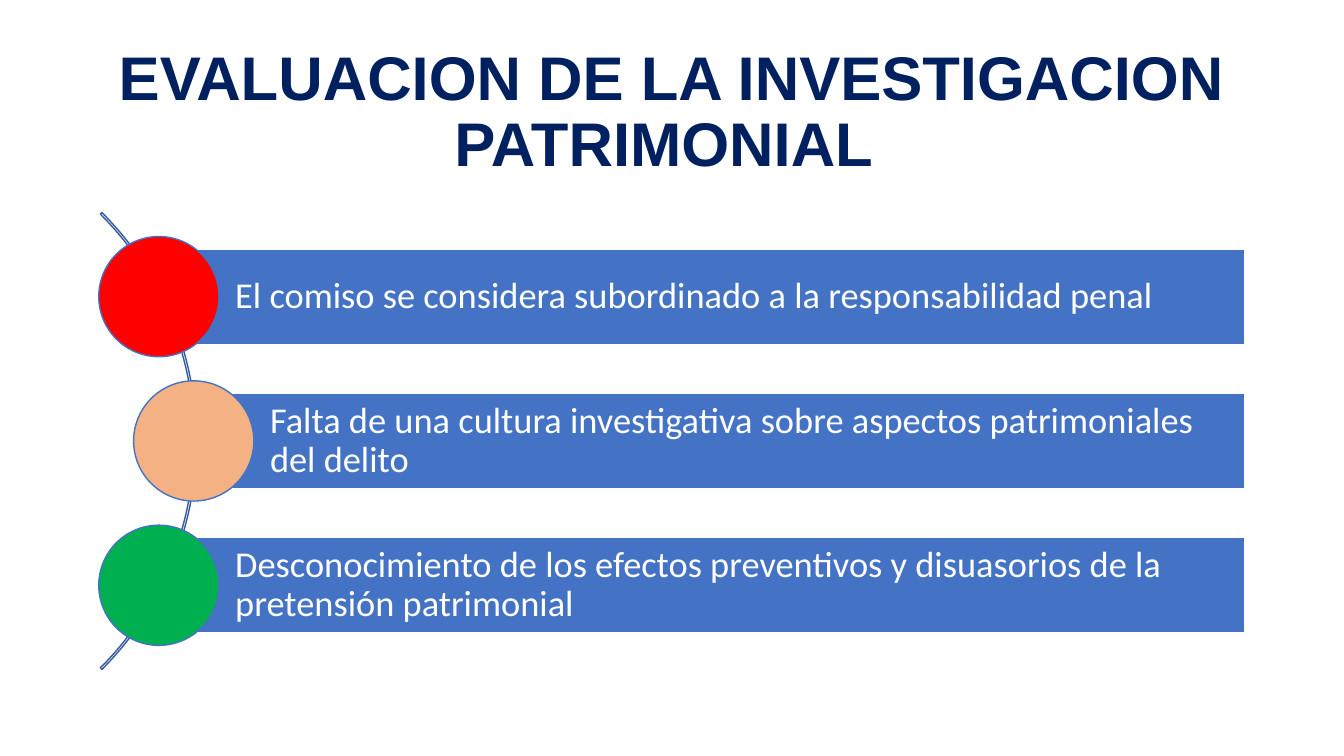
import pptx
import pptx.util
import pptx.dml.color
import pptx.enum.shapes
import pptx.enum.text

Pt = pptx.util.Pt
RGBColor = pptx.dml.color.RGBColor
MSO_SHAPE = pptx.enum.shapes.MSO_SHAPE
PP_ALIGN = pptx.enum.text.PP_ALIGN

NAVY = RGBColor(0x00, 0x20, 0x60)
BLUE = RGBColor(0x44, 0x72, 0xC4)
ARC_BLUE = RGBColor(0x36, 0x5B, 0x9D)
WHITE = RGBColor(0xFF, 0xFF, 0xFF)
RED = RGBColor(0xFF, 0x00, 0x00)
PEACH = RGBColor(0xF4, 0xB1, 0x83)
GREEN = RGBColor(0x00, 0xB0, 0x50)

TITLE_FONT = {"name": "Arial", "size": Pt(44), "bold": True}
BAR_FONT = {"name": "Calibri", "size": Pt(26), "bold": False}
BAR_INSETS = {"margin_left": Pt(54.5), "margin_right": Pt(5),
              "margin_top": Pt(5), "margin_bottom": Pt(5)}

MIDDLE_Y, PITCH = 315, 103.1
BAR_RIGHT, BAR_HEIGHT, CIRCLE = 889.2, 68.2, 85.9
ARC_LEFT, ARC_SIZE = -321.1, 461.5
ITEMS = [
    (113.5, RED, "El comiso se considera subordinado a la responsabilidad penal"),
    (138.4, PEACH, "Falta de una cultura investigativa sobre aspectos patrimoniales del delito"),
    (113.5, GREEN, "Desconocimiento de los efectos preventivos y disuasorios de la pretensión patrimonial"),
]


class SlideBuilder:
    """Draws styled elements on the current slide, with lengths in points."""

    def __init__(self, prs):
        self.s = prs.slides.add_slide(prs.slide_layouts[6])

    def text(self, tf, text, font, color, align, insets):
        tf.word_wrap = True
        tf.vertical_anchor = pptx.enum.text.MSO_ANCHOR.MIDDLE
        for name, value in insets.items():
            setattr(tf, name, value)
        p = tf.paragraphs[0]
        p.alignment = align
        p.line_spacing = 0.9
        r = p.add_run()
        r.text = text
        for name, value in font.items():
            setattr(r.font, name, value)
        r.font.color.rgb = color

    def title(self, text, x, y, w, h):
        tb = self.s.shapes.add_textbox(Pt(x), Pt(y), Pt(w), Pt(h))
        self.text(tb.text_frame, text, TITLE_FONT, NAVY, PP_ALIGN.CENTER, {})

    def shape(self, kind, x, y, w, h, line, fill=None):
        sp = self.s.shapes.add_shape(kind, Pt(x), Pt(y), Pt(w), Pt(h))
        sp.shadow.inherit = False
        if fill is None:
            sp.fill.background()
        else:
            sp.fill.solid()
            sp.fill.fore_color.rgb = fill
        sp.line.color.rgb = line
        sp.line.width = Pt(1)
        return sp

    def arc(self, x, middle, size):
        sp = self.shape(MSO_SHAPE.BLOCK_ARC, x, middle - size / 2, size, size, ARC_BLUE)
        for i, value in enumerate((189, 27, 0.0034)):
            sp.adjustments[i] = value

    def item(self, x, middle, color, text):
        bar = self.shape(MSO_SHAPE.RECTANGLE, x, middle - BAR_HEIGHT / 2,
                         BAR_RIGHT - x, BAR_HEIGHT, WHITE, BLUE)
        self.text(bar.text_frame, text, BAR_FONT, WHITE, PP_ALIGN.LEFT, BAR_INSETS)
        self.shape(MSO_SHAPE.OVAL, x - CIRCLE / 2, middle - CIRCLE / 2,
                   CIRCLE, CIRCLE, BLUE, color)


def main():
    prs = pptx.Presentation()
    prs.slide_width, prs.slide_height = Pt(960), Pt(540)
    slide = SlideBuilder(prs)
    slide.title("EVALUACION DE LA INVESTIGACION PATRIMONIAL ", 66, 28.75, 828, 104.4)
    slide.arc(ARC_LEFT, MIDDLE_Y, ARC_SIZE)
    for i, (x, color, text) in enumerate(ITEMS):
        slide.item(x, MIDDLE_Y + (i - 1) * PITCH, color, text)
    prs.save("out.pptx")


if __name__ == "__main__":
    main()
